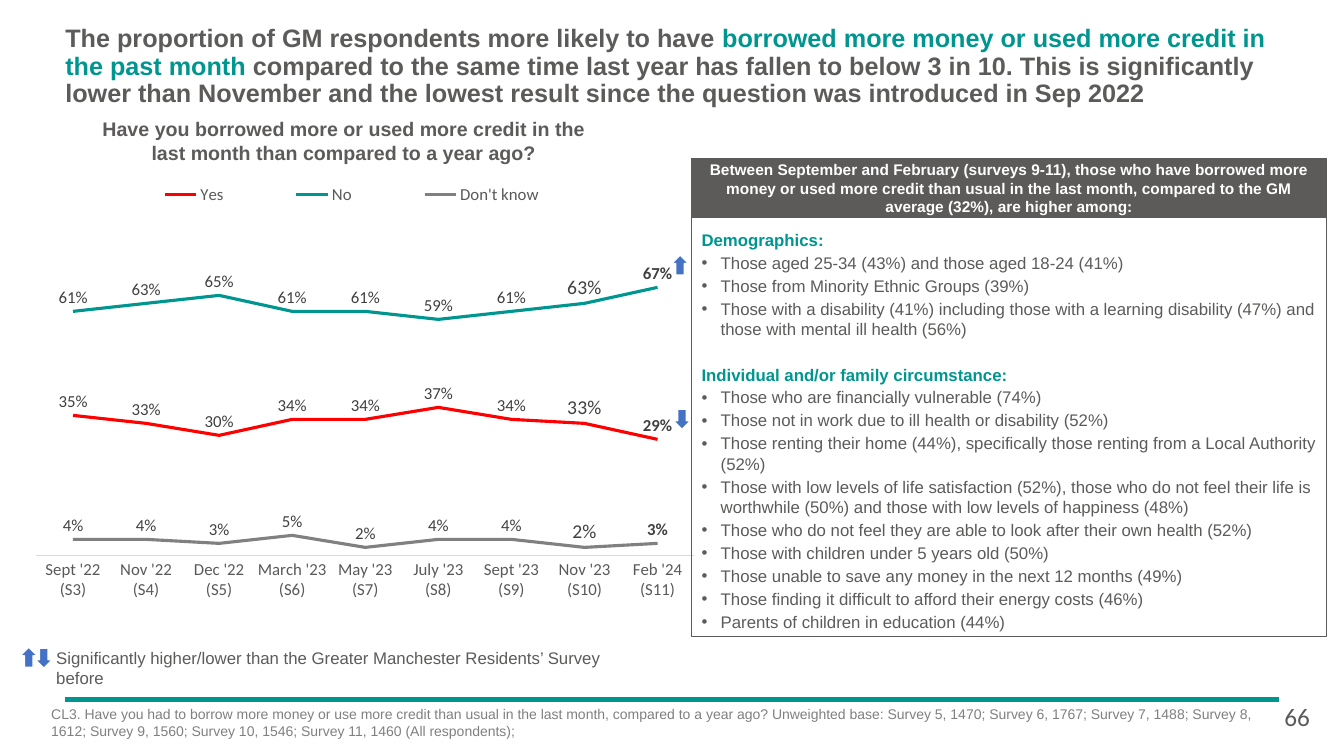
from dataclasses import dataclass

from lxml.etree import SubElement
from pptx import Presentation
from pptx.chart.data import CategoryChartData
from pptx.dml.color import RGBColor
from pptx.enum.chart import XL_CHART_TYPE as CT, XL_LABEL_POSITION as LP
from pptx.enum.chart import XL_LEGEND_POSITION as LEG, XL_TICK_MARK as TM
from pptx.enum.shapes import MSO_CONNECTOR, MSO_SHAPE as SH
from pptx.enum.text import MSO_ANCHOR as MA, PP_ALIGN as PA
from pptx.oxml.ns import qn
from pptx.util import Inches, Pt


@dataclass(frozen=True)
class Theme:
    """Colours, fonts and type sizes of the slide."""
    teal: str = "009690"
    dark: str = "5C5B5A"
    grey: str = "808080"
    red: str = "FF0000"
    blue: str = "4472C4"
    white: str = "FFFFFF"
    axis: str = "D9D9D9"
    axis_text: str = "595959"
    label: str = "404040"
    font: str = "Arial"
    chart_font: str = "Calibri"
    title: int = 18
    heading: int = 14
    body: int = 12
    banner: int = 11
    note: int = 10


T = Theme()
WAVES = ["Sept '22", "Nov '22", "Dec '22", "March '23", "May '23",
         "July '23", "Sept '23", "Nov '23", "Feb '24"]
SERIES = [
    ("Yes", T.red, (.35, .33, .30, .34, .34, .37, .34, .33, .29)),
    ("No", T.teal, (.61, .63, .65, .61, .61, .59, .61, .63, .67)),
    ("Don't know", T.grey, (.04, .04, .03, .05, .02, .04, .04, .02, .03)),
]
TITLE = [
    ("The proportion of GM respondents more likely to have ", T.dark),
    ("borrowed more money or used more credit in the past month", T.teal),
    (" compared to the same time last year has fallen to below 3 in 10. This is significantly "
     "lower than November and the lowest result since the question was introduced in Sep 2022",
     T.dark),
]
QUESTION = "Have you borrowed more or used more credit in the last month than compared to a year ago?"
BANNER = ("Between September and February (surveys 9-11), those who have borrowed more money or used "
          "more credit than usual in the last month, compared to the GM average (32%), "
          "are higher among:")
GROUPS = {
    "Demographics:": [
        "Those aged 25-34 (43%) and those aged 18-24 (41%)",
        "Those from Minority Ethnic Groups (39%)",
        "Those with a disability (41%) including those with a learning disability (47%) and "
        "those with mental ill health (56%)",
    ],
    "Individual and/or family circumstance:": [
        "Those who are financially vulnerable (74%)",
        "Those not in work due to ill health or disability (52%)",
        "Those renting their home (44%), specifically those renting from a Local Authority (52%)",
        "Those with low levels of life satisfaction (52%), those who do not feel their life is "
        "worthwhile (50%) and those with low levels of happiness (48%)",
        "Those who do not feel they are able to look after their own health (52%)",
        "Those with children under 5 years old (50%)",
        "Those unable to save any money in the next 12 months (49%)",
        "Those finding it difficult to afford their energy costs (46%)",
        "Parents of children in education (44%)",
    ],
}
SIGNIFICANCE = "Significantly higher/lower than the Greater Manchester Residents’ Survey before"
BASE = ("CL3. Have you had to borrow more money or use more credit than usual in the last month, "
        "compared to a year ago? Unweighted base: Survey 5, 1470; Survey 6, 1767; Survey 7, 1488; "
        "Survey 8, 1612; Survey 9, 1560; Survey 10, 1546; Survey 11, 1460 (All respondents);")


def style(font, size, color, bold=False, name=T.font):
    """Apply type settings to a font."""
    for key, value in dict(size=Pt(size), bold=bold, name=name).items():
        setattr(font, key, value)
    font.color.rgb = RGBColor.from_string(color)


def add_run(p, text, *fmt, **kw):
    """Append a styled run to a paragraph."""
    r = p.add_run()
    r.text = text
    style(r.font, *fmt, **kw)


def add_text(s, box, runs, size, bold=False, name=T.font, inset=None, **fmt):
    """Place one paragraph of coloured runs in a text box."""
    tf = s.shapes.add_textbox(*map(Inches, box)).text_frame
    tf.word_wrap = True
    tf.vertical_anchor = fmt.pop("anchor", MA.TOP)
    if inset is not None:
        for side in ("left", "top", "right", "bottom"):
            setattr(tf, f"margin_{side}", Inches(inset))
    p = tf.paragraphs[0]
    for key, value in fmt.items():
        setattr(p, key, value)
    for text, color in runs:
        add_run(p, text, size, color, bold, name=name)


def add_box(s, kind, box, fill, line, width):
    """Add a flat preset shape."""
    sp = s.shapes.add_shape(kind, *map(Inches, box))
    sp.shadow.inherit = False
    if fill:
        sp.fill.solid()
        sp.fill.fore_color.rgb = RGBColor.from_string(fill)
    else:
        sp.fill.background()
    sp.line.color.rgb = RGBColor.from_string(line)
    sp.line.width = Pt(width)
    return sp


def add_arrow(s, x, y, up=False):
    """Add a significance arrow pointing up or down."""
    sp = add_box(s, SH.DOWN_ARROW, (x, y, .17, .2), T.blue, T.white, 1)
    sp.rotation = 180 if up else 0


def set_layout(parent, anchor, inner=False, **fractions):
    """Fix a chart part at fractions of the chart area."""
    for old in parent.findall(qn("c:layout")):
        parent.remove(old)
    layout = parent.makeelement(qn("c:layout"))
    manual = SubElement(layout, qn("c:manualLayout"))
    settings = {"layoutTarget": "inner"} if inner else {}
    settings |= {"xMode": "edge", "yMode": "edge"} | fractions
    for key, value in settings.items():
        SubElement(manual, qn(f"c:{key}")).set("val", str(value))
    if anchor is None:
        parent.insert(0, layout)
    else:
        anchor.addnext(layout)


def label_series(series):
    """Label each point, enlarging the second last and bolding the last."""
    labels = series.data_labels
    for key, value in dict(show_value=True, position=LP.ABOVE, number_format="0%",
                           number_format_is_linked=False).items():
        setattr(labels, key, value)
    style(labels.font, T.body, T.label, name=T.chart_font)
    for index, size, bold in ((7, T.heading, False), (8, T.body, True)):
        label = series.points[index].data_label
        style(label.font, size, T.label, bold, name=T.chart_font)
        label.position = LP.ABOVE


def add_trend(s, box):
    """Draw the trend chart with its arrows."""
    x, y, w, h = box
    data = CategoryChartData(number_format="0%")
    data.categories = [f"{wave}\n(S{n})" for n, wave in enumerate(WAVES, 3)]
    for name, _, values in SERIES:
        data.add_series(name, values)
    chart = s.shapes.add_chart(CT.LINE, *map(Inches, box), data).chart
    style(chart.font, T.body, T.axis_text, name=T.chart_font)
    chart.has_title = False
    chart.has_legend = True
    legend = chart.legend
    legend.position = LEG.TOP
    legend.include_in_layout = False
    style(legend.font, T.body, T.axis_text, name=T.chart_font)
    legend_pos = legend._element.find(qn("c:legendPos"))
    set_layout(legend._element, legend_pos, x=.12, y=.03, w=.75, h=.06)
    plot_area = chart._chartSpace.chart.plotArea
    set_layout(plot_area, None, inner=True, x=.03, y=.14, w=.97, h=.63)
    value_axis = chart.value_axis
    for key, value in dict(minimum_scale=0, maximum_scale=.8, visible=False,
                           has_major_gridlines=False).items():
        setattr(value_axis, key, value)
    axis = chart.category_axis
    axis.major_tick_mark = axis.minor_tick_mark = TM.NONE
    axis.format.line.color.rgb = RGBColor.from_string(T.axis)
    axis.format.line.width = Pt(.75)
    style(axis.tick_labels.font, T.body, T.axis_text, name=T.chart_font)
    plot = chart.plots[0]
    plot.vary_by_categories = False
    for series, (_, color, _) in zip(plot.series, SERIES):
        series.smooth = False
        series.format.line.color.rgb = RGBColor.from_string(color)
        series.format.line.width = Pt(2.25)
        label_series(series)
    add_arrow(s, x + w - .23, y + .9, up=True)
    add_arrow(s, x + w - .21, y + 2.43)


def add_findings(s, box, banner_h=.59):
    """Build the banner and the bulleted panel below it."""
    x, y, w, h = box
    tf = add_box(s, SH.RECTANGLE, (x, y, w, banner_h), T.dark, T.dark, .75).text_frame
    tf.word_wrap, tf.vertical_anchor = True, MA.MIDDLE
    p = tf.paragraphs[0]
    p.alignment = PA.CENTER
    add_run(p, BANNER, T.banner, T.white, True)
    panel = (x, y + banner_h, w, h - banner_h)
    tf = add_box(s, SH.RECTANGLE, panel, None, T.dark, .75).text_frame
    tf.word_wrap, tf.vertical_anchor, tf.margin_top = True, MA.TOP, Inches(.12)
    rows = [(text, text == head) for head, items in GROUPS.items() for text in (head, *items)]
    for i, (text, is_head) in enumerate(rows):
        p = tf.add_paragraph() if i else tf.paragraphs[0]
        p.alignment, p.space_after = PA.LEFT, Pt(2)
        if is_head and i:
            p.space_before = Pt(16)
        if not is_head:
            pPr = p._p.get_or_add_pPr()
            pPr.set("marL", str(Inches(.19)))
            pPr.set("indent", str(-Inches(.19)))
            SubElement(pPr, qn("a:buFont")).set("typeface", T.font)
            SubElement(pPr, qn("a:buChar")).set("char", "•")
        add_run(p, text, T.body, T.teal if is_head else T.dark, is_head)


def add_key(s, x, y):
    """Explain the significance arrows."""
    add_arrow(s, x, y + .04, up=True)
    add_arrow(s, x + .15, y + .05)
    add_text(s, (x + .26, y, 6, .5), [(SIGNIFICANCE, T.dark)], T.body)


def add_footer(s, x, y, w):
    """Draw the rule, the base note and the page number."""
    line = s.shapes.add_connector(MSO_CONNECTOR.STRAIGHT,
                                  *map(Inches, (x, y, x + w, y)))
    line.line.color.rgb = RGBColor.from_string(T.teal)
    line.line.width = Pt(3)
    SubElement(line._element.spPr, qn("a:effectLst"))
    add_text(s, (x - .23, y + .01, 12.25, .55), [(BASE, T.grey)], T.note)
    add_text(s, (x + 12, y - .03, .53, .4), [("66", T.dark)], T.title, name=T.chart_font)


def main():
    """Build and save the slide."""
    prs = Presentation()
    prs.slide_width, prs.slide_height = Inches(13.33), Inches(7.5)
    s = prs.slides.add_slide(prs.slide_layouts[6])
    add_text(s, (.55, .23, 12.43, .87), TITLE, T.title, True, anchor=MA.MIDDLE, line_spacing=.9)
    add_text(s, (.99, 1.16, 4.84, .47), [(QUESTION, T.dark)], T.heading, True, inset=0,
             alignment=PA.CENTER)
    add_trend(s, (.16, 1.63, 6.73, 5.04))
    add_findings(s, (6.86, 1.57, 6.3, 4.75))
    add_key(s, .2, 6.38)
    add_footer(s, .64, 6.94, 12.05)
    prs.save("out.pptx")


if __name__ == "__main__":
    main()
